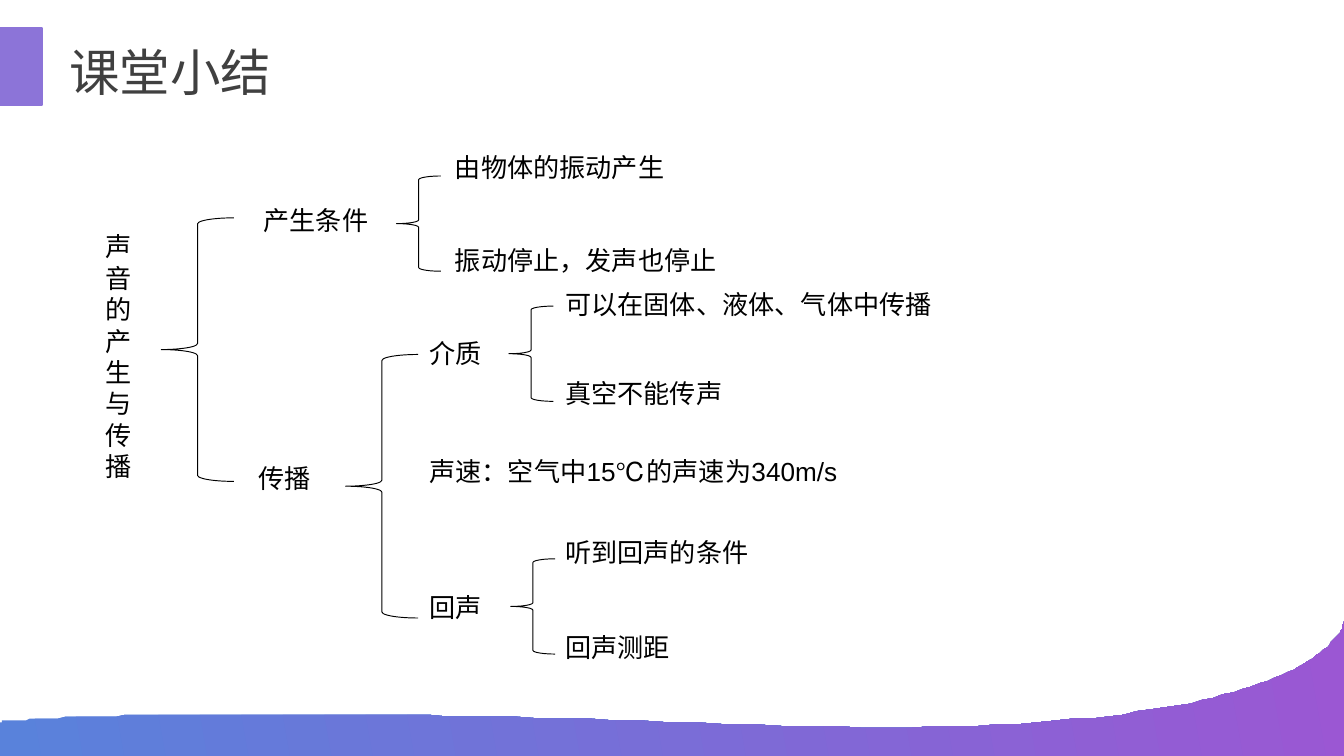
from pptx import Presentation
from pptx.dml.color import RGBColor
from pptx.enum.shapes import MSO_SHAPE
from pptx.enum.text import MSO_AUTO_SIZE, PP_ALIGN
from pptx.util import Pt

RECT = MSO_SHAPE.RECTANGLE
BRACE = MSO_SHAPE.LEFT_BRACE
LEFT, CENTER, JUSTIFY = PP_ALIGN.LEFT, PP_ALIGN.CENTER, PP_ALIGN.JUSTIFY
FIT = MSO_AUTO_SIZE.SHAPE_TO_FIT_TEXT


def rgb(value):
    return RGBColor.from_string(value)


def bezier(a, b, c, d, steps=60):
    points = []
    for i in range(steps + 1):
        t = i / steps
        u = 1 - t
        weights = (u**3, 3 * u * u * t, 3 * u * t * t, t**3)
        points.append(tuple(sum(w * p[k] for w, p in zip(weights, (a, b, c, d)))
                            for k in (0, 1)))
    return points


class SummarySlide:
    font = "Arial"
    ink = "000000"
    title_ink = "404040"
    accent = "8C74D8"
    wave_colors = ("5982DB", "9B57D3")

    def __init__(self, prs):
        self.s = prs.slides.add_slide(prs.slide_layouts[6])

    def wave(self, points):
        builder = self.s.shapes.build_freeform(*points[0], scale=Pt(1))
        builder.add_line_segments(points[1:], close=True)
        sp = builder.convert_to_shape()
        sp.shadow.inherit = False
        sp.line.fill.background()
        sp.fill.gradient()
        sp.fill.gradient_angle = 10
        for i, (stop, color) in enumerate(zip(sp.fill.gradient_stops, self.wave_colors)):
            stop.position = i
            stop.color.rgb = rgb(color)

    def shape(self, kind, x, y, w, h, line, width, fill=None):
        sp = self.s.shapes.add_shape(kind, Pt(x), Pt(y), Pt(w), Pt(h))
        sp.shadow.inherit = False
        if fill:
            sp.fill.solid()
            sp.fill.fore_color.rgb = rgb(fill)
        else:
            sp.fill.background()
        sp.line.color.rgb = rgb(line)
        sp.line.width = Pt(width)

    def bar(self, x, y, w, h):
        self.shape(RECT, x, y, w, h, self.accent, 1, self.accent)

    def brace(self, x, y, w, h):
        self.shape(BRACE, x, y, w, h, self.ink, 0.5)

    def text(self, text, x, y, w, h=22.3, align=LEFT, size=14, color=ink):
        tf = self.s.shapes.add_textbox(Pt(x), Pt(y), Pt(w), Pt(h)).text_frame
        tf.word_wrap = True
        tf.auto_size = FIT
        tf.margin_left = tf.margin_right = Pt(5.4)
        tf.margin_top = tf.margin_bottom = Pt(2.7)
        tf.text = text
        p = tf.paragraphs[0]
        p.alignment = align
        r = p.runs[0]
        r.font.name = self.font
        r.font.size = Pt(size)
        r.font.color.rgb = rgb(color)

    def title(self, text, x, y, w, h):
        self.text(text, x, y, w, h, JUSTIFY, 27, self.title_ink)


def main():
    prs = Presentation()
    prs.slide_width, prs.slide_height = Pt(720), Pt(405)
    slide = SummarySlide(prs)

    crest = (403.2, 388.1)
    left_edge, right_edge = (0, 386.6), (720, 332.6)
    slide.wave(bezier(crest, (90, 376.6), left_edge, left_edge)
               + [(0, 405), (720, 405)]
               + bezier(right_edge, right_edge, (715.7, 400.3), crest))
    slide.bar(0, 15.1, 22.3, 41)

    slide.text("声音的产生与传播", 51.1, 121, 36.7, 141)
    slide.text("产生条件", 117.4, 106.6, 103.7, align=CENTER)
    slide.text("传播", 115.9, 245, 72.7, align=CENTER)

    branches = (
        (238.3, (("由物体的振动产生", 78.5, 233.3),
                 ("振动停止，发声也停止", 128.2, 284.4))),
        (224.6, (("介质", 177.8, 64.8),
                 ("声速：空气中15℃的声速为340m/s", 241.2, 389.5),
                 ("回声", 313.9, 68.4))),
        (297.4, (("可以在固体、液体、气体中传播", 151.9, 279.4),
                 ("真空不能传声", 199.4, 159.8),
                 ("听到回声的条件", 284.4, 191.5),
                 ("回声测距", 335.5, 110.2))),
    )
    for x, items in branches:
        for text, y, w in items:
            slide.text(text, x, y, w)

    for x, y in ((212.4, 94.3), (272.6, 164), (273.6, 299.4)):
        slide.brace(x, y, 23.8, 51)
    for x, y in ((185.2, 189.9), (86.4, 116.7)):
        slide.brace(x, y, 38.9, 141.2)

    slide.title("课堂小结", 31.7, 19.4, 122.4, 38.2)
    prs.save("out.pptx")


if __name__ == "__main__":
    main()
